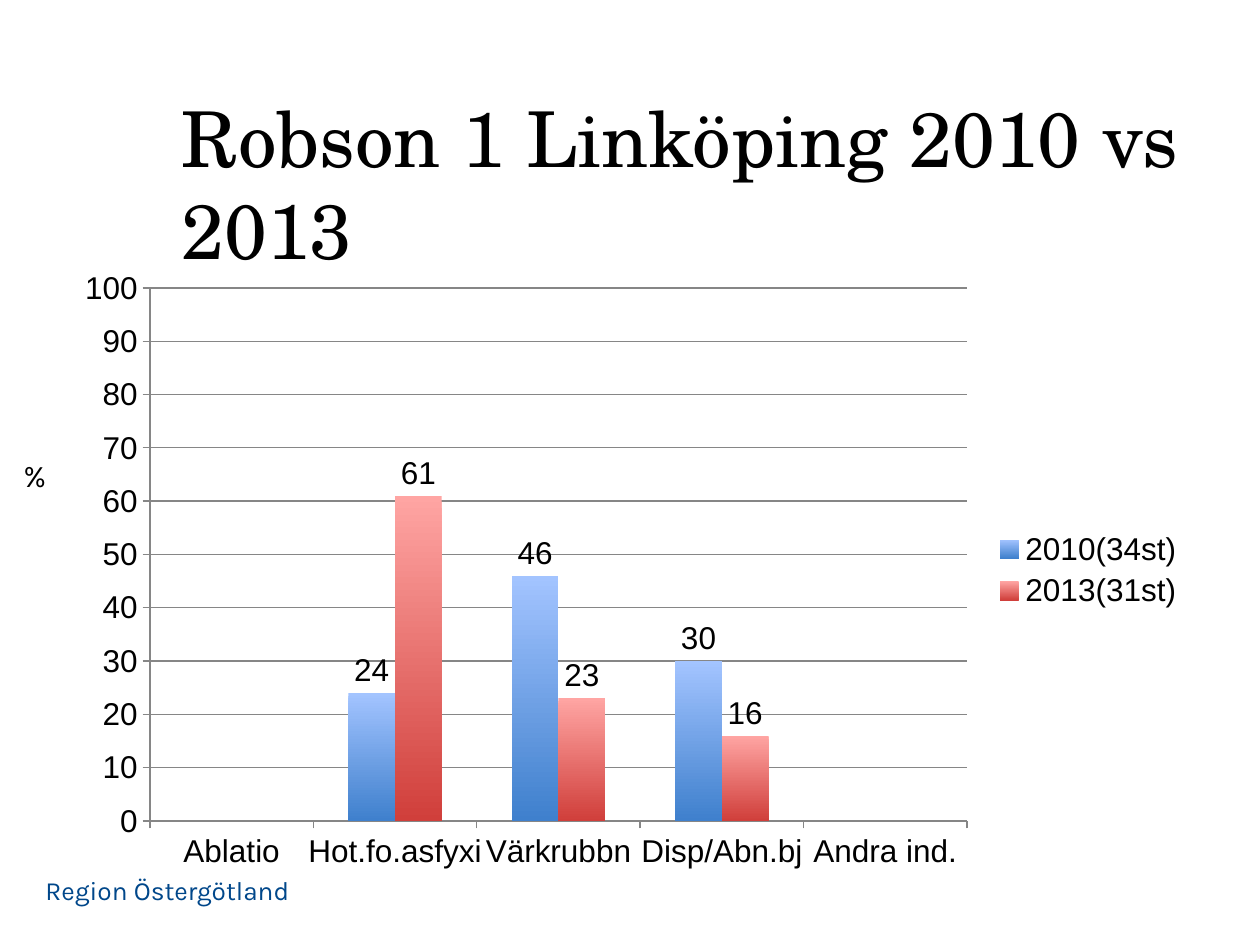
from lxml import etree
from pptx import Presentation
from pptx import util as u
from pptx.chart.data import CategoryChartData
from pptx.dml.color import RGBColor
from pptx.enum import chart as charts, text
from pptx.oxml.ns import qn

PX = 914400 / 126  # EMU in one px
BLACK, GREY = "000000", "868686"
CATEGORIES = ["Ablatio", "Hot.fo.asfyxi", "Värkrubbn", "Disp/Abn.bj", "Andra ind."]
# name, values, top colour, bottom colour
SERIES = [
    ("2010(34st)", [None, 24, 46, 30, None], "A3C4FF", "3F80CD"),
    ("2013(31st)", [None, 61, 23, 16, None], "FFA5A3", "D03F3B"),
]


def px(length):
    return u.Emu(round(length * PX))


def colour(hex_string):
    return RGBColor.from_string(hex_string)


def set_font(font, size, name, hex_string):
    font.size = u.Pt(size)
    font.name = name
    font.color.rgb = colour(hex_string)


def add_label(page, area, words, size, name, hex_string):
    box = page.shapes.add_textbox(*map(px, area))
    frame = box.text_frame
    frame.word_wrap = True
    frame.vertical_anchor = text.MSO_ANCHOR.TOP
    span = frame.paragraphs[0].add_run()
    span.text = words
    set_font(span.font, size, name, hex_string)


def place_plot(chart, area, plot_area):
    """Fix the inner plot area, given in px on the page."""
    left, top, width, height = area
    x, y, w, h = plot_area
    shares = {"x": (x - left) / width, "y": (y - top) / height,
              "w": w / width, "h": h / height}
    plot = chart._chartSpace.chart.plotArea
    for old in plot.findall(qn("c:layout")):
        plot.remove(old)
    layout = etree.Element(qn("c:layout"))
    plot.insert(0, layout)
    manual = etree.SubElement(layout, qn("c:manualLayout"))
    settings = [("layoutTarget", "inner"), ("xMode", "edge"), ("yMode", "edge")]
    settings += [(key, f"{share:.4f}") for key, share in shares.items()]
    for key, value in settings:
        etree.SubElement(manual, qn(f"c:{key}")).set("val", value)


def style_axes(chart):
    for axis in (chart.category_axis, chart.value_axis):
        axis.major_tick_mark = charts.XL_TICK_MARK.OUTSIDE
        axis.minor_tick_mark = charts.XL_TICK_MARK.NONE
        axis.format.line.color.rgb = colour(GREY)
        axis.format.line.width = u.Pt(0.75)
    values = chart.value_axis
    values.minimum_scale, values.maximum_scale, values.major_unit = 0, 100, 10
    values.has_major_gridlines = True
    values.major_gridlines.format.line.color.rgb = colour(GREY)
    values.major_gridlines.format.line.width = u.Pt(0.75)


def add_columns(page, area, plot_area):
    data = CategoryChartData(number_format="General")
    data.categories = CATEGORIES
    for name, values, *_ in SERIES:
        data.add_series(name, values)
    chart = page.shapes.add_chart(
        charts.XL_CHART_TYPE.COLUMN_CLUSTERED, *map(px, area), data).chart
    set_font(chart.font, 18, "Arial", BLACK)
    chart.has_title = False
    chart.has_legend = True
    chart.legend.position = charts.XL_LEGEND_POSITION.RIGHT
    chart.legend.include_in_layout = False
    place_plot(chart, area, plot_area)
    style_axes(chart)

    # Columns shaded from top to bottom, with their values above
    plot = chart.plots[0]
    plot.vary_by_categories = False
    plot.gap_width, plot.overlap = 150, 0
    for series, (_, _, *shades) in zip(plot.series, SERIES):
        fill = series.format.fill
        fill.gradient()
        fill.gradient_angle = 270
        for stop, shade in zip(fill.gradient_stops, shades):
            stop.color.rgb = colour(shade)
        series.data_labels.show_value = True
        series.data_labels.position = charts.XL_LABEL_POSITION.OUTSIDE_END


def main():
    deck = Presentation()
    deck.slide_width, deck.slide_height = px(1260), px(945)
    page = deck.slides.add_slide(deck.slide_layouts[6])

    # Footer and title
    add_label(page, (33, 868, 464, 44), "Region Östergötland", 15, "Karla", "00478A")
    add_label(page, (169, 84, 1091, 127), "Robson 1 Linköping 2010 vs 2013",
              44, "TeX Gyre Schola", BLACK)

    # Chart with its unit
    add_columns(page, (63, 258, 1134, 624), (150, 288, 817, 533))
    add_label(page, (11, 450, 55, 50), "%", 18, "Karla", BLACK)

    deck.save("out.pptx")


if __name__ == "__main__":
    main()
